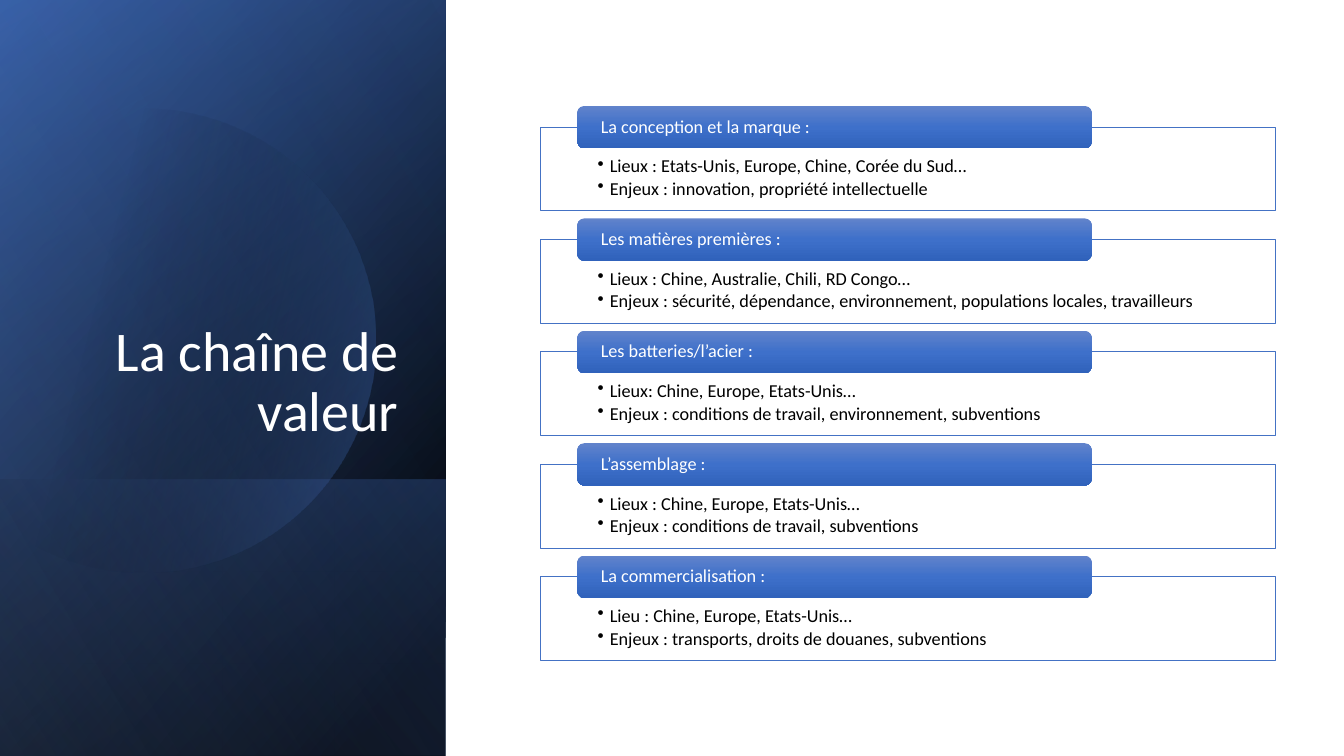
import math
from dataclasses import dataclass

import pptx
import pptx.dml.color
import pptx.enum.shapes
import pptx.enum.text
import pptx.oxml.ns
import pptx.util
from lxml import etree

Cm = pptx.util.Cm
Pt = pptx.util.Pt
qn = pptx.oxml.ns.qn
Shapes = pptx.enum.shapes.MSO_SHAPE
Anchor = pptx.enum.text.MSO_ANCHOR
Align = pptx.enum.text.PP_ALIGN


@dataclass(frozen=True)
class Theme:
    font: str = "Calibri"
    title_size: int = 40
    body_size: int = 13
    white: str = "FFFFFF"
    black: str = "000000"
    accent: str = "4472C4"
    navy: str = "2F5597"
    pale: str = "8FAADC"
    tab_stops: tuple = ((0, "6183CB", 100), (50, "3E70CA", 100), (100, "3062BB", 100))


THEME = Theme()

STEPS = [
    ("La conception et la marque :",
     "Lieux : Etats-Unis, Europe, Chine, Corée du Sud…",
     "Enjeux : innovation, propriété intellectuelle"),
    ("Les matières premières :",
     "Lieux : Chine, Australie, Chili, RD Congo…",
     "Enjeux : sécurité, dépendance, environnement, populations locales, travailleurs"),
    ("Les batteries/l’acier :",
     "Lieux: Chine, Europe, Etats-Unis…",
     "Enjeux : conditions de travail, environnement, subventions"),
    ("L’assemblage :",
     "Lieux : Chine, Europe, Etats-Unis…",
     "Enjeux : conditions de travail, subventions"),
    ("La commercialisation :",
     "Lieu : Chine, Europe, Etats-Unis…",
     "Enjeux : transports, droits de douanes, subventions"),
]


def rgb(code):
    return pptx.dml.color.RGBColor.from_string(code)


def set_alpha(color, percent):
    etree.SubElement(color, qn("a:alpha")).set("val", str(percent * 1000))


def fill_gradient(shape, stops, angle):
    """Stops are (position %, colour, opacity %)."""
    shape.fill.background()
    gradient = etree.Element(qn("a:gradFill"), rotWithShape="1")
    stop_list = etree.SubElement(gradient, qn("a:gsLst"))
    for position, code, opacity in stops:
        stop = etree.SubElement(stop_list, qn("a:gs"), pos=str(position * 1000))
        color = etree.SubElement(stop, qn("a:srgbClr"), val=code)
        if opacity < 100:
            set_alpha(color, opacity)
    etree.SubElement(gradient, qn("a:lin"), ang=str(angle * 60000), scaled="0")
    properties = shape.element.spPr
    properties.replace(properties.find(qn("a:noFill")), gradient)


def add_plain_shape(page, kind, box):
    shape = page.shapes.add_shape(kind, *map(Cm, box))
    shape.shadow.inherit = False
    shape.line.fill.background()
    return shape


def set_frame(shape, insets, anchor):
    frame = shape.text_frame
    frame.word_wrap = True
    frame.vertical_anchor = anchor
    (frame.margin_left, frame.margin_top,
     frame.margin_right, frame.margin_bottom) = map(Cm, insets)
    return frame


def write(para, text, size, color, align=Align.LEFT):
    para.alignment = align
    para.line_spacing = 0.9
    span = para.add_run()
    span.text = text
    span.font.name = THEME.font
    span.font.size = Pt(size)
    span.font.color.rgb = rgb(color)


def add_bullet(para):
    para.level = 1
    para.space_after = Pt(2)
    properties = para._p.get_or_add_pPr()
    properties.set("marL", str(Cm(0.31)))
    properties.set("indent", str(-Cm(0.31)))
    etree.SubElement(properties, qn("a:buChar"), char="•")


def add_turned_layer(page, box, stops, angle):
    """Rectangle turned a quarter and mirrored that covers the given box."""
    left, top, width, height = box
    shift = (width - height) / 2
    layer = add_plain_shape(page, Shapes.RECTANGLE,
                            (left + shift, top - shift, height, width))
    layer.rotation = 90
    layer.element.spPr.find(qn("a:xfrm")).set("flipH", "1")
    fill_gradient(layer, stops, angle)


def add_disc(page, box):
    """Disc cut off by the left edge of the panel."""
    left, top = box[:2]
    center_x, center_y, radius = left + 3.61, top + 8.58, 5.84
    points = [(Cm(center_x + radius * math.cos(math.radians(degree))),
               Cm(center_y + radius * math.sin(math.radians(degree))))
              for degree in range(-128, 129, 2)]
    builder = page.shapes.build_freeform(*points[0])
    builder.add_line_segments(points[1:], close=True)
    disc = builder.convert_to_shape()
    disc.shadow.inherit = False
    disc.line.fill.background()
    fill_gradient(disc, [(29, THEME.black, 0), (100, THEME.accent, 43)], 14)


def add_title_panel(page, box):
    left, top, width, height = box
    # Background layers
    add_turned_layer(page, box, [(8, THEME.black, 100), (100, THEME.navy, 100)], 50)
    add_turned_layer(page, box, [(0, THEME.black, 0), (99, THEME.accent, 46)], 30)
    add_turned_layer(page, (left, top + 12.09, width, height - 12.09),
                     [(2, THEME.accent, 29), (100, THEME.black, 30)], 130)
    add_disc(page, box)
    add_turned_layer(page, box, [(0, THEME.black, 0), (99, THEME.pale, 11)], 120)
    # Title
    title = page.shapes.add_textbox(Cm(left + 1.63), Cm(top + 4.67), Cm(8.66), Cm(6.65))
    frame = set_frame(title, (0.25, 0.13, 0.25, 0.13), Anchor.BOTTOM)
    write(frame.paragraphs[0], "La chaîne de valeur",
          THEME.title_size, THEME.white, Align.RIGHT)


def add_step(page, box, heading, lines):
    left, top, width, height = box
    # Framed details
    card = add_plain_shape(page, Shapes.RECTANGLE, box)
    card.fill.solid()
    card.fill.fore_color.rgb = rgb(THEME.white)
    set_alpha(card.element.spPr.find(qn("a:solidFill"))[0], 90)
    card.line.color.rgb = rgb(THEME.accent)
    card.line.width = Pt(0.5)
    frame = set_frame(card, (1.45, 0.76, 1.45, 0.25), Anchor.TOP)
    for index, line in enumerate(lines):
        para = frame.add_paragraph() if index else frame.paragraphs[0]
        write(para, line, THEME.body_size, THEME.black)
        add_bullet(para)
    # Heading tab over the top edge
    tab = add_plain_shape(page, Shapes.ROUNDED_RECTANGLE,
                          (left + 0.94, top - 0.53, width * 0.7, 1.07))
    fill_gradient(tab, THEME.tab_stops, 90)
    frame = set_frame(tab, (0.54, 0, 0.54, 0), Anchor.MIDDLE)
    write(frame.paragraphs[0], heading, THEME.body_size, THEME.white)


def add_value_chain(page, box):
    left, top, width, height = box
    card_height = 2.11
    pitch = (height - card_height) / (len(STEPS) - 1)
    for index, (heading, *lines) in enumerate(STEPS):
        add_step(page, (left, top + index * pitch, width, card_height), heading, lines)


def main():
    deck = pptx.Presentation()
    deck.slide_width, deck.slide_height = Cm(33.87), Cm(19.05)
    page = deck.slides.add_slide(deck.slide_layouts[6])
    add_title_panel(page, (0, 0, 11.23, 19.05))
    add_value_chain(page, (13.61, 3.2, 18.52, 13.44))
    deck.save("out.pptx")


if __name__ == "__main__":
    main()
